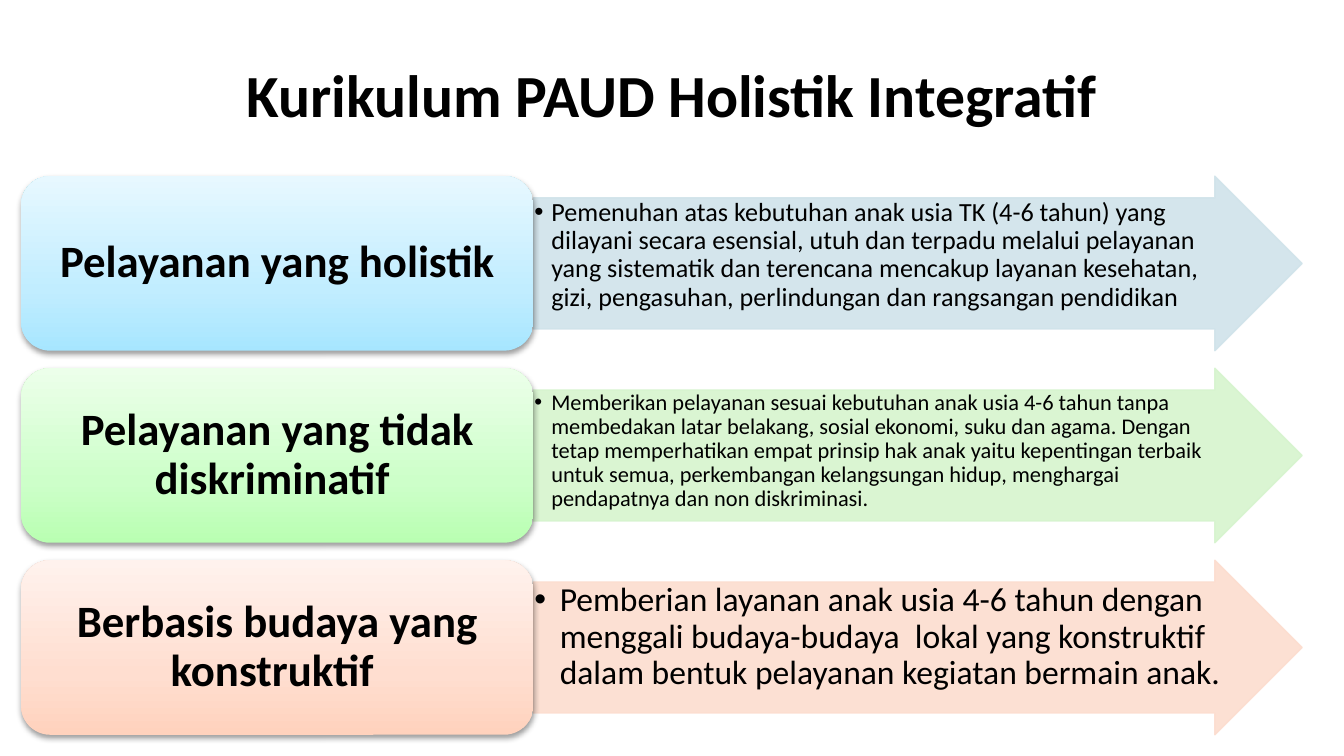
from copy import deepcopy
from lxml import etree
from pptx import Presentation
from pptx.dml.color import RGBColor
from pptx.enum import shapes as es, text as et
from pptx.oxml.ns import qn
from pptx.util import Cm, Pt

FONT = "Calibri"
TOP, STEP, HIGH = 3.33, 3.63, 3.3       # rows, in cm
LEFT, MID = 0.4, 10.08                  # left edges of labels and arrows

# label, body, body size, bullet indent, arrow colour, label gradient
ROWS = [
    ("Pelayanan yang holistik",
     "Pemenuhan atas kebutuhan anak usia TK (4-6 tahun) yang dilayani secara "
     "esensial, utuh dan terpadu melalui pelayanan yang sistematik dan terencana "
     "mencakup layanan kesehatan, gizi, pengasuhan, perlindungan dan rangsangan "
     "pendidikan",
     14, 0.32, "D0E3EA", ("A7E6FF", "C1EDFF", "E7F8FF")),
    ("Pelayanan yang tidak diskriminatif ",
     "Memberikan pelayanan sesuai kebutuhan anak usia 4-6 tahun tanpa membedakan "
     "latar belakang, sosial ekonomi, suku dan agama. Dengan tetap memperhatikan "
     "empat prinsip hak anak yaitu kepentingan terbaik untuk semua, perkembangan "
     "kelangsungan hidup, menghargai pendapatnya dan non diskriminasi.",
     12, 0.32, "D6F4CE", ("B9FFB2", "CDFFC9", "ECFFEA")),
    ("Berbasis budaya yang konstruktif ",
     "Pemberian layanan anak usia 4-6 tahun dengan menggali budaya-budaya  lokal "
     "yang konstruktif dalam bentuk pelayanan kegiatan bermain anak.",
     18, 0.48, "FCDDCF", ("FFD2BD", "FFDED0", "FFF2ED")),
]


def rgb(code):
    return RGBColor.from_string(code)


def child(node, tag, **attrs):
    return etree.SubElement(node, qn(tag), attrs)


def write(frame, words, size, bold=False, align=et.PP_ALIGN.LEFT,
          anchor=et.MSO_ANCHOR.TOP, lines=0.9, inset=None, indent=None):
    frame.word_wrap = True
    frame.auto_size = et.MSO_AUTO_SIZE.NONE
    frame.vertical_anchor = anchor
    if inset is not None:
        frame.margin_left = frame.margin_right = Cm(inset)
        frame.margin_top = frame.margin_bottom = Cm(inset)
    para = frame.paragraphs[0]
    para.alignment = align
    para.line_spacing = lines
    if indent:
        para.level = 1
        props = para._p.get_or_add_pPr()
        props.set("marL", str(Cm(indent)))
        props.set("indent", str(-Cm(indent)))
        child(props, "a:buFont", typeface="Arial")
        child(props, "a:buChar", char="•")
    run = para.add_run()
    run.text = words
    font = run.font
    font.name, font.size, font.bold = FONT, Pt(size), bold
    font.color.rgb = rgb("000000")


def text_box(slide, x, y, w, h, words, size, **form):
    box = slide.shapes.add_textbox(Cm(x), Cm(y), Cm(w), Cm(h))
    write(box.text_frame, words, size, **form)


def add_arrow(slide, y, color):
    arrow = slide.shapes.add_shape(es.MSO_SHAPE.RIGHT_ARROW,
                                   Cm(MID), Cm(y), Cm(14.53), Cm(HIGH))
    arrow.shadow.inherit = False
    arrow.adjustments[0], arrow.adjustments[1] = 0.75, 0.5
    arrow.fill.solid()
    arrow.fill.fore_color.rgb = rgb(color)
    arrow.line.color.rgb = rgb(color)
    arrow.line.width = Pt(0.75)
    # fill and line are both slightly see-through
    for tone in arrow._element.spPr.iter(qn("a:srgbClr")):
        child(tone, "a:alpha", val="90000")


def add_card(slide, y, colors):
    card = slide.shapes.add_shape(es.MSO_SHAPE.ROUNDED_RECTANGLE,
                                  Cm(LEFT), Cm(y), Cm(9.68), Cm(HIGH))
    card.line.fill.background()
    # three-stop gradient, darkest at the bottom
    card.fill.gradient()
    card.fill.gradient_angle = 90
    props = card._element.spPr
    stops = props.find(".//" + qn("a:gsLst"))
    stops.insert(1, deepcopy(stops[0]))
    for stop, place, color in zip(card.fill.gradient_stops, (0, 0.35, 1), colors):
        stop.position = place
        stop.color.rgb = rgb(color)
    # soft shadow below
    card.shadow.inherit = False
    shade = child(props.find(qn("a:effectLst")), "a:outerShdw",
                  blurRad=str(Pt(3.1)), dist=str(Pt(1.6)),
                  dir="5400000", rotWithShape="0")
    tone = child(shade, "a:srgbClr", val="000000")
    child(tone, "a:alpha", val="38000")


def add_row(slide, y, label, body, size, indent, color, colors):
    add_arrow(slide, y, color)
    text_box(slide, MID, y + 0.41, 13.28, 2.46, body, size,
             inset=0.02, indent=indent)
    add_card(slide, y, colors)
    text_box(slide, LEFT + 0.16, y + 0.16, 9.36, 2.98, label, 24, bold=True,
             align=et.PP_ALIGN.CENTER, anchor=et.MSO_ANCHOR.MIDDLE)


def add_title(slide, words):
    title = slide.shapes.title
    title.left, title.top = Cm(1.27), Cm(0.58)
    title.width, title.height = Cm(22.86), Cm(2.39)
    write(title.text_frame, words, 32, bold=True, lines=1.0,
          align=et.PP_ALIGN.CENTER, anchor=et.MSO_ANCHOR.MIDDLE)


def main():
    deck = Presentation()
    deck.slide_width, deck.slide_height = Cm(25.4), Cm(14.29)
    slide = deck.slides.add_slide(deck.slide_layouts[5])
    add_title(slide, "Kurikulum PAUD Holistik Integratif")
    for i, row in enumerate(ROWS):
        add_row(slide, TOP + i * STEP, *row)
    deck.save("out.pptx")


if __name__ == "__main__":
    main()
